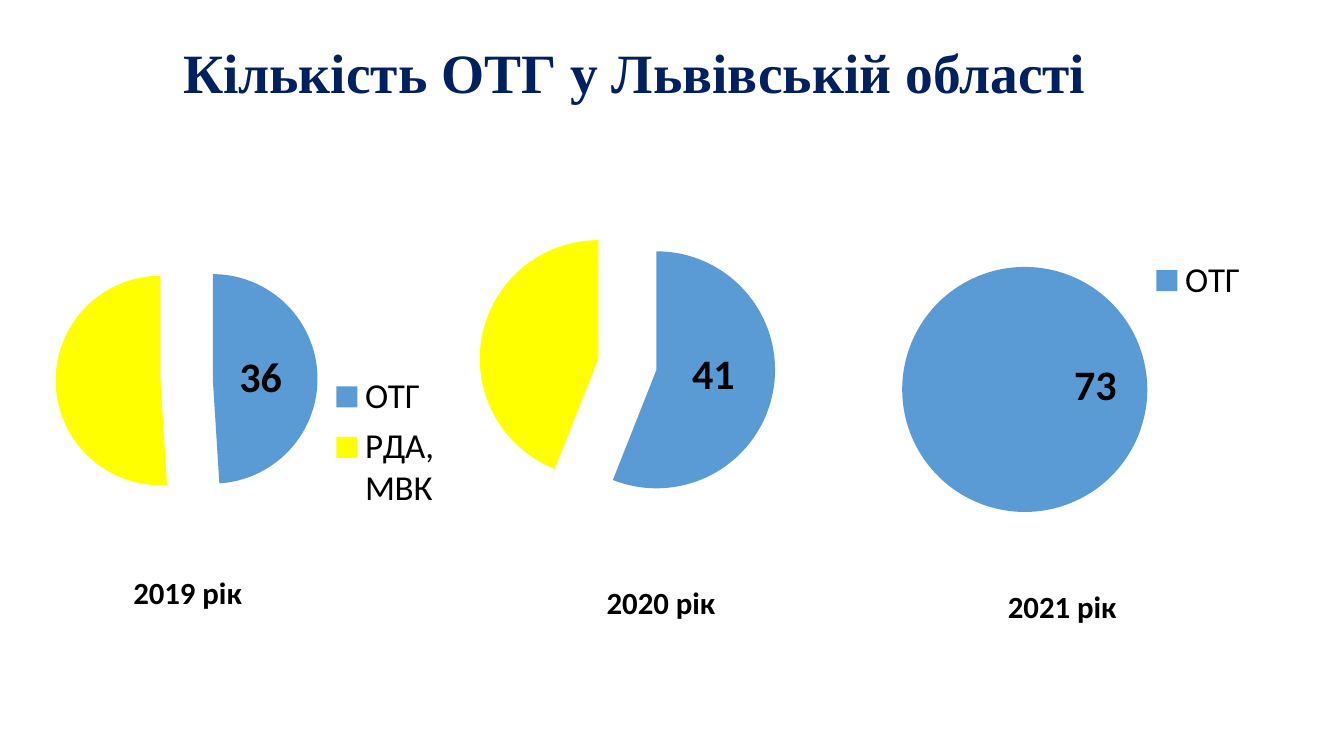
"""Build a slide comparing community counts over three years."""
from lxml import etree
from pptx import Presentation
from pptx.chart import data as cd
from pptx.dml.color import RGBColor
from pptx.enum import chart as ec, text as et
from pptx.oxml import ns
from pptx.util import Inches, Pt

NAVY = RGBColor(0x00, 0x20, 0x60)
BLACK = RGBColor(0x00, 0x00, 0x00)
BLUE = RGBColor(0x5B, 0x9B, 0xD5)
YELLOW = RGBColor(0xFF, 0xFF, 0x00)

PIES = [
    ((0.39, 2, 4.06, 3.5), ["ОТГ", "РДА, МВК"], [49, 51],
     (0.04, 0.12, 0.64, 0.77), (0.7, 0.47, 0.29, 0.43)),
    ((8.51, 1.44, 4.47, 4.2), ["ОТГ"], [100],
     (0.03, 0.14, 0.68, 0.73), (0.63, 0.25, 0.25, 0.14)),
    ((4.39, 2.01, 3.63, 3.21), ["1", "2"], [56, 44],
     (0.1, 0.04, 0.81, 0.92), None),
]
LABELS = [
    ("2019 рік", (0.99, 5.64, 1.74, 0.47), 22),
    ("2021 рік", (9.71, 5.78, 1.65, 0.47), 22),
    ("2020 рік", (5.68, 5.74, 1.75, 0.47), 22),
    ("36", (2.14, 3.43, 0.89, 0.61), 30),
    ("41", (6.65, 3.4, 0.85, 0.61), 30),
    ("73", (10.44, 3.51, 0.85, 0.61), 30),
]


def set_font(font, size, color=BLACK, name="Calibri", bold=False):
    font.size, font.name, font.bold = Pt(size), name, bold
    font.color.rgb = color


def add_title(slide, words):
    title = slide.shapes.title
    title.left, title.top, title.width, title.height = map(
        Inches, (0.94, 0.4, 10.71, 0.7))
    frame = title.text_frame
    frame.text = words
    frame.vertical_anchor = et.MSO_ANCHOR.MIDDLE
    para = frame.paragraphs[0]
    para.alignment = et.PP_ALIGN.CENTER
    para.line_spacing = 0.9
    set_font(para.runs[0].font, 39.6, NAVY, "Times New Roman", True)


def add_label(slide, words, box, size):
    frame = slide.shapes.add_textbox(*map(Inches, box)).text_frame
    frame.word_wrap = True
    frame.auto_size = et.MSO_AUTO_SIZE.SHAPE_TO_FIT_TEXT
    frame.text = words
    para = frame.paragraphs[0]
    para.alignment = et.PP_ALIGN.CENTER
    set_font(para.runs[0].font, size, bold=True)


def place(parent, index, area, inner=False):
    for old in parent.findall(ns.qn("c:layout")):
        parent.remove(old)
    layout = etree.Element(ns.qn("c:layout"))
    manual = etree.SubElement(layout, ns.qn("c:manualLayout"))
    rules = [("layoutTarget", "inner")] if inner else []
    rules += [("xMode", "edge"), ("yMode", "edge"), *zip("xywh", area)]
    for tag, val in rules:
        etree.SubElement(manual, ns.qn("c:" + tag), val=str(val))
    parent.insert(index, layout)


def explode(series, amount):
    node = etree.Element(ns.qn("c:explosion"), val=str(amount))
    series._element.find(ns.qn("c:tx")).addnext(node)


def add_pie(slide, box, cats, vals, area, key):
    data = cd.CategoryChartData()
    data.categories = cats
    data.add_series("Series 1", vals)
    chart = slide.shapes.add_chart(
        ec.XL_CHART_TYPE.PIE, *map(Inches, box), data).chart
    set_font(chart.font, 18)
    chart.has_title = False
    plot = chart.plots[0]
    plot.vary_by_categories = True
    series = plot.series[0]
    explode(series, 25)
    for i, color in enumerate((BLUE, YELLOW)[:len(vals)]):
        fill = series.points[i].format.fill
        fill.solid()
        fill.fore_color.rgb = color
    place(chart._chartSpace.chart.plotArea, 0, area, True)
    chart.has_legend = key is not None
    if key:
        legend = chart.legend
        legend.position = ec.XL_LEGEND_POSITION.RIGHT
        legend.include_in_layout = False
        set_font(legend.font, 25)
        place(legend._element, 1, key)


def main():
    deck = Presentation()
    deck.slide_width, deck.slide_height = Inches(13.33), Inches(7.5)
    slide = deck.slides.add_slide(deck.slide_layouts[5])
    add_title(slide, "Кількість ОТГ у Львівській області")
    for pie in PIES:
        add_pie(slide, *pie)
    for label in LABELS:
        add_label(slide, *label)
    deck.save("out.pptx")


if __name__ == "__main__":
    main()
